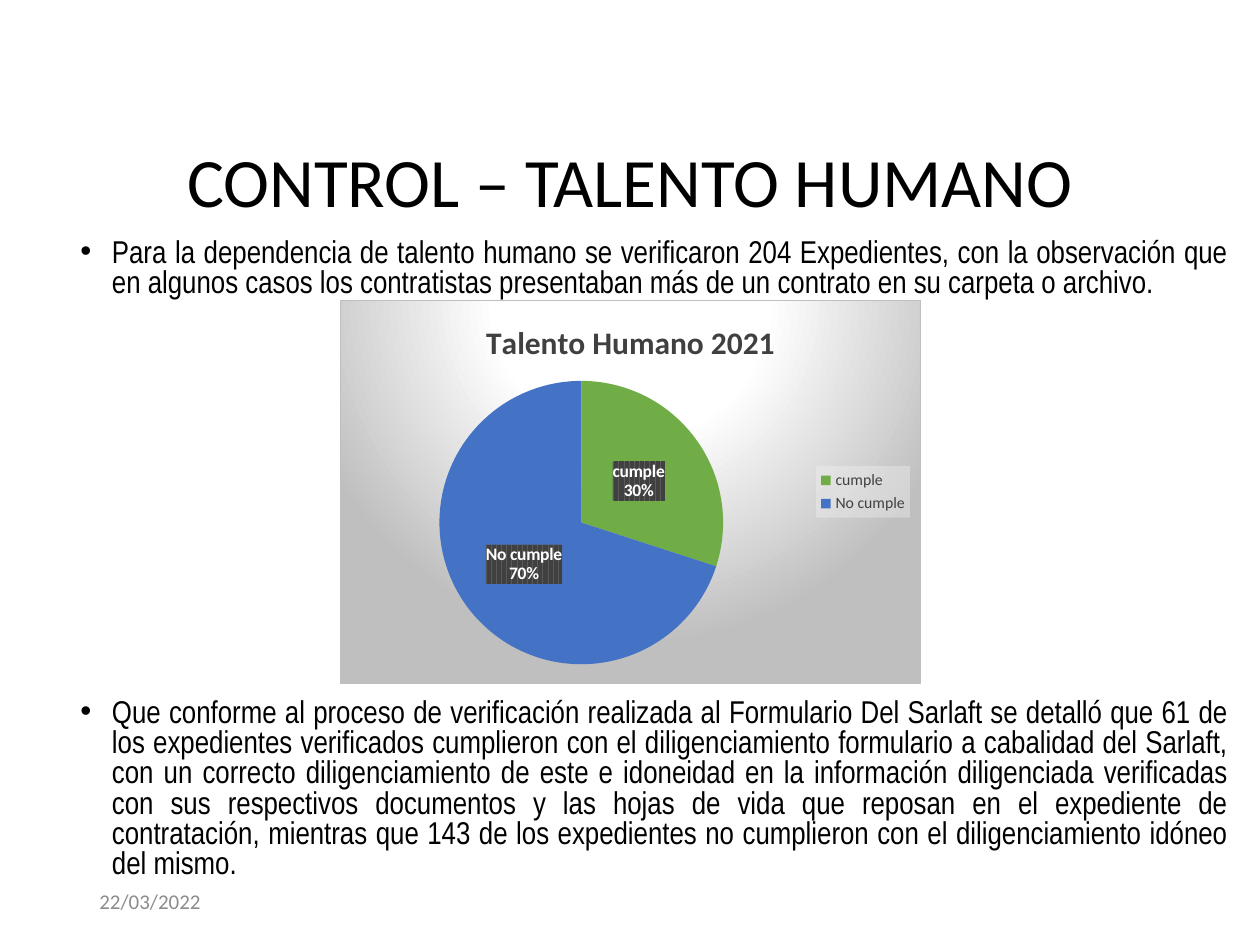
from dataclasses import dataclass

from lxml.etree import fromstring
from pptx import Presentation
from pptx.chart.data import CategoryChartData
from pptx.dml.color import RGBColor
from pptx.enum.chart import XL_CHART_TYPE, XL_LABEL_POSITION, XL_LEGEND_POSITION
from pptx.enum.text import MSO_ANCHOR, PP_ALIGN
from pptx.util import Inches, Pt

NAMESPACES = (
    'xmlns:a="http://schemas.openxmlformats.org/drawingml/2006/main" '
    'xmlns:c="http://schemas.openxmlformats.org/drawingml/2006/chart"'
)


@dataclass(frozen=True)
class Theme:
    heading_font: str = "Calibri"
    body_font: str = "Arial Narrow"
    black: str = "000000"
    white: str = "FFFFFF"
    muted: str = "8C8C8C"
    dark: str = "404040"
    light: str = "F2F2F2"
    border: str = "BFBFBF"
    slices: tuple = ("70AD47", "4472C4")
    title_size: float = 39.6
    body_size: float = 18
    date_size: float = 12
    chart_title_size: float = 18
    label_size: float = 10
    legend_size: float = 9


def element(tag, content):
    return fromstring(f"<{tag} {NAMESPACES}>{content}</{tag}>")


def color(value):
    return f'<a:srgbClr val="{value}"/>'


def style_font(font, name, size, value, bold=False):
    font.name, font.size, font.bold = name, Pt(size), bold
    font.color.rgb = RGBColor.from_string(value)


class SlideBuilder:
    def __init__(self, page, theme):
        self.page, self.theme = page, theme

    def add_span(self, para, text, font, size, value, bold=False):
        span = para.add_run()
        span.text = text
        style_font(span.font, font, size, value, bold)

    def place(self, shape, left, top, width, height):
        shape.left, shape.top = Inches(left), Inches(top)
        shape.width, shape.height = Inches(width), Inches(height)

    def text_box(self, left, top, width, height):
        box = self.page.shapes.add_textbox(
            Inches(left), Inches(top), Inches(width), Inches(height))
        box.text_frame.word_wrap = True
        return box.text_frame

    def title(self, text, *area):
        theme = self.theme
        holder = self.page.shapes.title
        self.place(holder, *area)
        holder.text_frame.vertical_anchor = MSO_ANCHOR.MIDDLE
        para = holder.text_frame.paragraphs[0]
        para.alignment, para.line_spacing = PP_ALIGN.CENTER, 0.9
        self.add_span(para, text, theme.heading_font, theme.title_size, theme.black)

    def bullet(self, text, *area):
        theme = self.theme
        para = self.text_box(*area).paragraphs[0]
        para.alignment, para.line_spacing = PP_ALIGN.JUSTIFY, 0.8
        properties = para._p.get_or_add_pPr()
        properties.set("marL", str(Inches(0.25)))
        properties.set("indent", str(Inches(-0.25)))
        properties.append(fromstring(f'<a:buFont {NAMESPACES} typeface="Arial"/>'))
        properties.append(fromstring(f'<a:buChar {NAMESPACES} char="•"/>'))
        self.add_span(para, text, theme.body_font, theme.body_size, theme.black)

    def date(self, text, *area):
        theme = self.theme
        frame = self.text_box(*area)
        frame.vertical_anchor = MSO_ANCHOR.MIDDLE
        self.add_span(frame.paragraphs[0], text, theme.heading_font,
                      theme.date_size, theme.muted)

    def pie(self, title, shares, left, top, width, height):
        theme = self.theme
        data = CategoryChartData()
        data.categories = list(shares)
        data.add_series("Series 1", list(shares.values()))
        chart = self.page.shapes.add_chart(
            XL_CHART_TYPE.PIE, Inches(left), Inches(top),
            Inches(width), Inches(height), data).chart
        style_font(chart.font, theme.heading_font, theme.label_size, theme.black)

        # Title
        chart.has_title = True
        self.add_span(chart.chart_title.text_frame.paragraphs[0], title,
                      theme.heading_font, theme.chart_title_size, theme.dark, True)
        chart.chart_title.include_in_layout = False

        # Slices
        plot = chart.plots[0]
        plot.vary_by_categories = True
        for index, value in enumerate(theme.slices):
            fill = plot.series[0].points[index].format.fill
            fill.solid()
            fill.fore_color.rgb = RGBColor.from_string(value)

        self.pie_labels(plot)
        self.pie_legend(chart)
        self.pie_background(chart)

    def pie_labels(self, plot):
        theme = self.theme
        plot.has_data_labels = True
        labels = plot.data_labels
        style_font(labels.font, theme.heading_font, theme.label_size, theme.white, True)
        labels.show_category_name = labels.show_percentage = True
        labels.show_value = False
        labels.position = XL_LABEL_POSITION.CENTER
        root = labels._element
        root.find("{*}txPr").addprevious(element(
            "c:spPr", f'<a:pattFill prst="dkVert"><a:fgClr>{color(theme.dark)}</a:fgClr>'
            f'<a:bgClr>{color("595959")}</a:bgClr></a:pattFill>'))
        root.find("{*}showBubbleSize").addnext(element("c:separator", "\n"))

    def pie_legend(self, chart):
        theme = self.theme
        chart.has_legend = True
        legend = chart.legend
        legend.position = XL_LEGEND_POSITION.RIGHT
        legend.include_in_layout = False
        style_font(legend.font, theme.heading_font, theme.legend_size, theme.dark)
        legend._element.find("{*}txPr").addprevious(element(
            "c:spPr", f'<a:solidFill><a:srgbClr val="{theme.light}">'
            '<a:alpha val="39000"/></a:srgbClr></a:solidFill>'))

    def pie_background(self, chart):
        theme = self.theme
        root = chart._chartSpace
        # Plot area as fractions of the chart
        plot_area = root.find(".//{*}plotArea")
        for old in plot_area.findall("{*}layout"):
            plot_area.remove(old)
        settings = {"layoutTarget": "inner", "xMode": "edge", "yMode": "edge",
                    "x": 0.17, "y": 0.21, "w": 0.49, "h": 0.74}
        rules = "".join(f'<c:{key} val="{value}"/>' for key, value in settings.items())
        plot_area.insert(0, element("c:layout", f"<c:manualLayout>{rules}</c:manualLayout>"))
        # Radial gradient and border
        stops = "".join(
            f'<a:gs pos="{position * 1000}">{color(value)}</a:gs>'
            for position, value in ((0, theme.white), (39, theme.white), (100, theme.border)))
        root.find("{*}chart").addnext(element(
            "c:spPr", f'<a:gradFill><a:gsLst>{stops}</a:gsLst><a:path path="circle">'
            '<a:fillToRect l="50000" t="-80000" r="50000" b="180000"/></a:path></a:gradFill>'
            f'<a:ln w="{Pt(0.75)}"><a:solidFill>{color(theme.border)}</a:solidFill></a:ln>'))


def main():
    deck = Presentation()
    deck.slide_width, deck.slide_height = Inches(10), Inches(7.5)
    page = deck.slides.add_slide(deck.slide_layouts[5])
    builder = SlideBuilder(page, Theme())

    # Heading and findings
    builder.title("CONTROL – TALENTO HUMANO", 0.69, 1.09, 8.62, 0.76)
    builder.bullet(
        "Para la dependencia de talento humano se verificaron 204 Expedientes, con la "
        "observación que en algunos casos los contratistas presentaban más de un contrato "
        "en su carpeta o archivo.", 0.54, 1.85, 9.31, 0.6)
    builder.bullet(
        "Que conforme al proceso de verificación realizada al Formulario Del Sarlaft se "
        "detalló que 61 de los expedientes verificados cumplieron con el diligenciamiento "
        "formulario a cabalidad del Sarlaft, con un correcto diligenciamiento de este e "
        "idoneidad en la información diligenciada verificadas con sus respectivos "
        "documentos y las hojas de vida que reposan en el expediente de contratación, "
        "mientras que 143 de los expedientes no cumplieron con el diligenciamiento idóneo "
        "del mismo.", 0.54, 5.5, 9.31, 1.5)

    # Compliance chart and date
    builder.pie("Talento Humano 2021", {"cumple": 30, "No cumple": 70},
                2.7, 2.38, 4.61, 3.05)
    builder.date("22/03/2022", 0.69, 6.95, 2.25, 0.4)
    deck.save("out.pptx")


if __name__ == "__main__":
    main()
